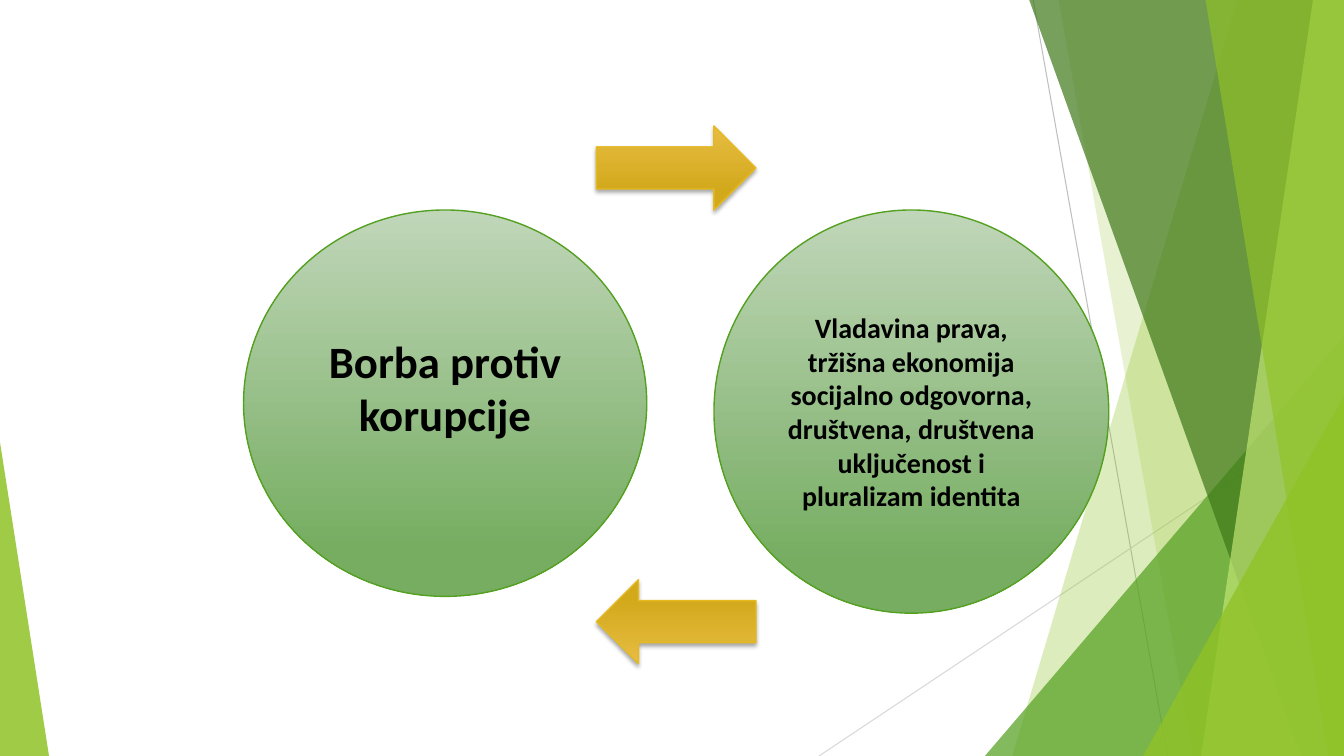
from lxml.etree import SubElement
from pptx import Presentation
from pptx.dml.color import RGBColor
from pptx.enum.shapes import MSO_CONNECTOR as Connector, MSO_SHAPE as Shape
from pptx.enum.text import MSO_ANCHOR as Anchor, PP_ALIGN as Align
from pptx.oxml.ns import qn
from pptx.util import Pt

WIDTH, HEIGHT = 960, 540
COLORS = {
    "lime": "90C226", "green": "54A021", "forest": "3F7819", "pale lime": "C0E474",
    "gray": "BFBFBF", "light gray": "D9D9D9", "black": "000000",
    "sage": "C0D6B9", "leaf": "76AD61",
    "gold": "E7BC43", "dark gold": "D2A91B", "gold edge": "E6B91E",
}


class Page:
    font = "Calibri"

    def __init__(self, deck):
        self.shapes = deck.slides.add_slide(deck.slide_layouts[6]).shapes

    def color(self, name):
        return RGBColor.from_string(COLORS[name])

    def line(self, start, end, color):
        line = self.shapes.add_connector(Connector.STRAIGHT, *map(Pt, start + end))
        line.line.color.rgb = self.color(color)
        line.line.width = Pt(0.75)
        SubElement(line._element.spPr, qn("a:effectLst"))

    def tint(self, shape, color, opacity):
        shape.shadow.inherit = False
        shape.line.fill.background()
        shape.fill.solid()
        shape.fill.fore_color.rgb = self.color(color)
        value = shape._element.spPr.find(".//" + qn("a:srgbClr"))
        SubElement(value, qn("a:alpha")).set("val", str(opacity * 1000))

    def band(self, top_left, bottom_left, color, opacity):
        """Four-sided band that reaches the right edge of the page."""
        builder = self.shapes.build_freeform(Pt(top_left), Pt(-0.6))
        corners = [(WIDTH, -0.6), (WIDTH, HEIGHT), (bottom_left, HEIGHT)]
        builder.add_line_segments([(Pt(x), Pt(y)) for x, y in corners])
        self.tint(builder.convert_to_shape(), color, opacity)

    def triangle(self, left, top, width, apex, color, opacity):
        """Triangle that stands on the bottom edge of the page."""
        box = map(Pt, (left, top, width, HEIGHT - top))
        shape = self.shapes.add_shape(Shape.ISOSCELES_TRIANGLE, *box)
        shape.adjustments[0] = apex
        self.tint(shape, color, opacity)

    def gradient(self, kind, box, colors, end, edge):
        shape = self.shapes.add_shape(kind, *map(Pt, box))
        shape.shadow.inherit = False
        shape.fill.gradient()
        shape.fill.gradient_angle = 270
        for stop, color, position in zip(shape.fill.gradient_stops, colors, (0, end)):
            stop.color.rgb = self.color(color)
            stop.position = position
        shape.line.color.rgb = self.color(edge)
        shape.line.width = Pt(1)
        return shape

    def circle(self, box, text, size, anchor, top_margin=3.6):
        shape = self.gradient(Shape.OVAL, box, ("sage", "leaf"), 0.88, "green")
        frame = shape.text_frame
        frame.word_wrap = True
        frame.vertical_anchor = anchor
        frame.margin_top = Pt(top_margin)
        frame.text = text
        para = frame.paragraphs[0]
        para.alignment = Align.CENTER
        font = para.runs[0].font
        font.name, font.size, font.bold = self.font, Pt(size), True
        font.color.rgb = self.color("black")

    def arrow(self, top, rotation):
        shape = self.gradient(Shape.RIGHT_ARROW, (426, top, 114, 60),
                              ("gold", "dark gold"), 0.78, "gold edge")
        shape.rotation = rotation
        effects = shape._element.spPr.find(qn("a:effectLst"))
        shadow = SubElement(effects, qn("a:outerShdw"), blurRad=str(Pt(3)),
                            dist=str(Pt(2)), dir="5400000", rotWithShape="0")
        value = SubElement(shadow, qn("a:srgbClr"), val=COLORS["black"])
        SubElement(value, qn("a:alpha"), val="35000")


def main():
    deck = Presentation()
    deck.slide_width, deck.slide_height = Pt(WIDTH), Pt(HEIGHT)
    page = Page(deck)

    # Background facets
    page.line((738, 0), (834, HEIGHT), "gray")
    page.line((WIDTH, 290), (585, HEIGHT), "light gray")
    page.band(884, 723, "lime", 30)
    page.band(756, 852, "lime", 20)
    page.triangle(703.5, 240, 256.5, 1, "green", 72)
    page.band(735, 929.5, "forest", 70)
    page.band(938, 858, "pale lime", 70)
    page.band(861, 949, "lime", 65)
    page.triangle(816.5, 283, 143.5, 1, "lime", 80)
    page.triangle(0, 316, 35, 0, "lime", 85)

    # Two goals
    page.circle((174, 150, 288, 276), "Borba protiv korupcije", 32, Anchor.TOP, 47.6)
    page.circle((510, 150, 282, 288),
                "Vladavina prava, tržišna ekonomija socijalno odgovorna, društvena, "
                "društvena uključenost i pluralizam identita", 20, Anchor.MIDDLE)

    # Arrows of the cycle
    page.arrow(90, 0)
    page.arrow(414, 180)

    deck.save("out.pptx")


if __name__ == "__main__":
    main()
